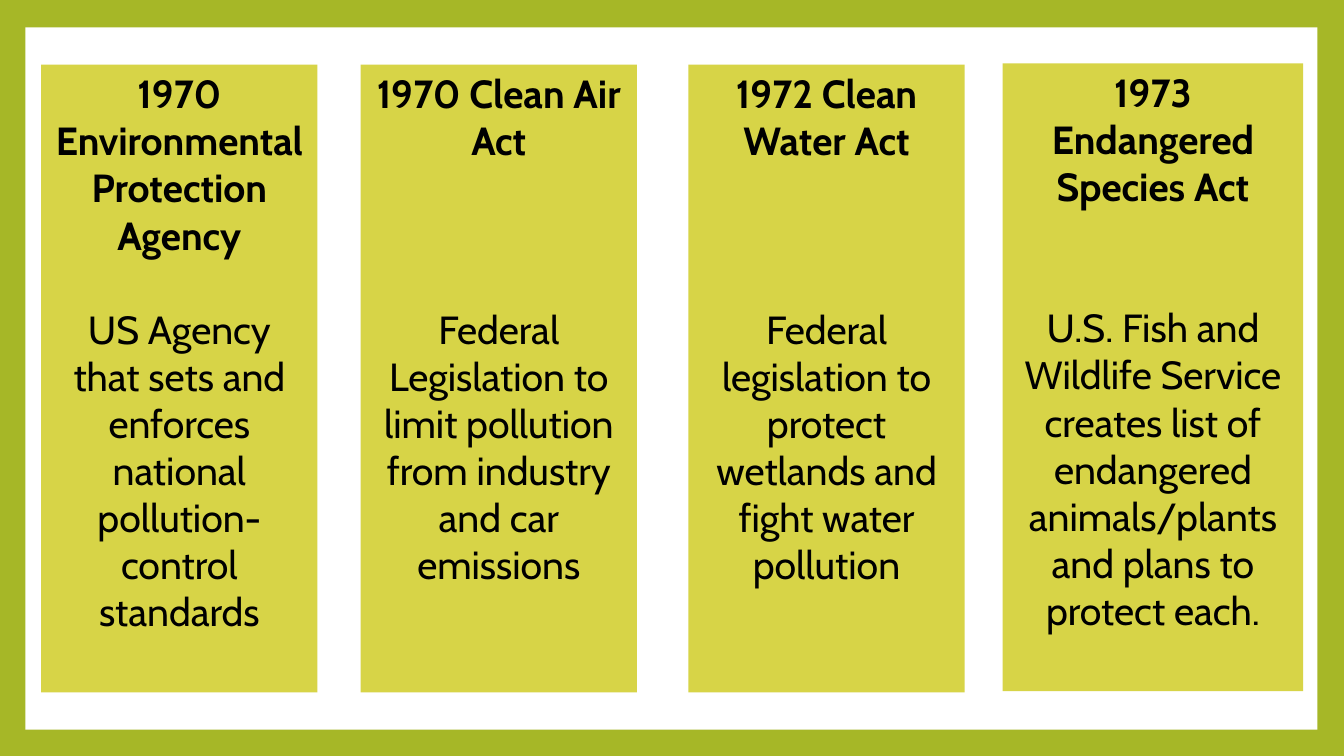
from pptx import Presentation
from pptx.dml.color import RGBColor
from pptx.enum import shapes, text
from pptx.util import Cm, Pt

COLORS = {"frame": "A6B727", "page": "FFFFFF", "card": "D7D447", "text": "000000"}
FONT_NAME = "Cabin"
FONT_SIZE = 28
LINE_HEIGHT = 33.6
HEADING_ROWS = 5

# left, top, width, height in centimetres; heading, heading lines, description
LAWS = [
    ((1.04, 1.63, 6.96, 15.82), "1970 Environmental Protection Agency", 4,
     "US Agency that sets and enforces national pollution-control standards"),
    ((9.09, 1.63, 6.96, 15.82), "1970 Clean Air Act", 2,
     "Federal Legislation to limit pollution from industry and car emissions"),
    ((17.35, 1.63, 6.96, 15.82), "1972 Clean Water Act", 2,
     "Federal legislation to protect wetlands and fight water pollution"),
    ((25.27, 1.6, 7.57, 15.82), "1973 Endangered Species Act", 3,
     "U.S. Fish and Wildlife Service creates list of endangered "
     "animals/plants and plans to protect each."),
]


def add_panel(slide, box, color):
    """Add a plain filled rectangle in the given box."""
    shape = slide.shapes.add_shape(
        shapes.MSO_SHAPE.RECTANGLE, *[Cm(length) for length in box])
    shape.shadow.inherit = False
    shape.fill.solid()
    shape.fill.fore_color.rgb = RGBColor.from_string(COLORS[color])
    shape.line.fill.background()
    return shape


def add_words(paragraph, words, bold):
    """Add one centred run to a paragraph."""
    paragraph.alignment = text.PP_ALIGN.CENTER
    run = paragraph.add_run()
    run.text = words
    run.font.name = FONT_NAME
    run.font.size = Pt(FONT_SIZE)
    run.font.bold = bold
    run.font.color.rgb = RGBColor.from_string(COLORS["text"])


def add_law_card(slide, box, heading, heading_lines, description):
    """Add a card whose description starts below a fixed number of rows."""
    frame = add_panel(slide, box, "card").text_frame
    frame.word_wrap = True
    frame.vertical_anchor = text.MSO_ANCHOR.TOP
    add_words(frame.paragraphs[0], heading, True)
    paragraph = frame.add_paragraph()
    paragraph.space_before = Pt((HEADING_ROWS - heading_lines) * LINE_HEIGHT)
    add_words(paragraph, description, False)


def add_background(slide, box):
    """Colour the slide as a frame around a white page."""
    fill = slide.background.fill
    fill.solid()
    fill.fore_color.rgb = RGBColor.from_string(COLORS["frame"])
    add_panel(slide, box, "page")


def main():
    """Build and save the slide of environmental laws."""
    presentation = Presentation()
    presentation.slide_width = Cm(33.87)
    presentation.slide_height = Cm(19.05)
    slide = presentation.slides.add_slide(presentation.slide_layouts[6])
    add_background(slide, (0.64, 0.69, 32.56, 17.7))
    for law in LAWS:
        add_law_card(slide, *law)
    presentation.save("out.pptx")


if __name__ == "__main__":
    main()
